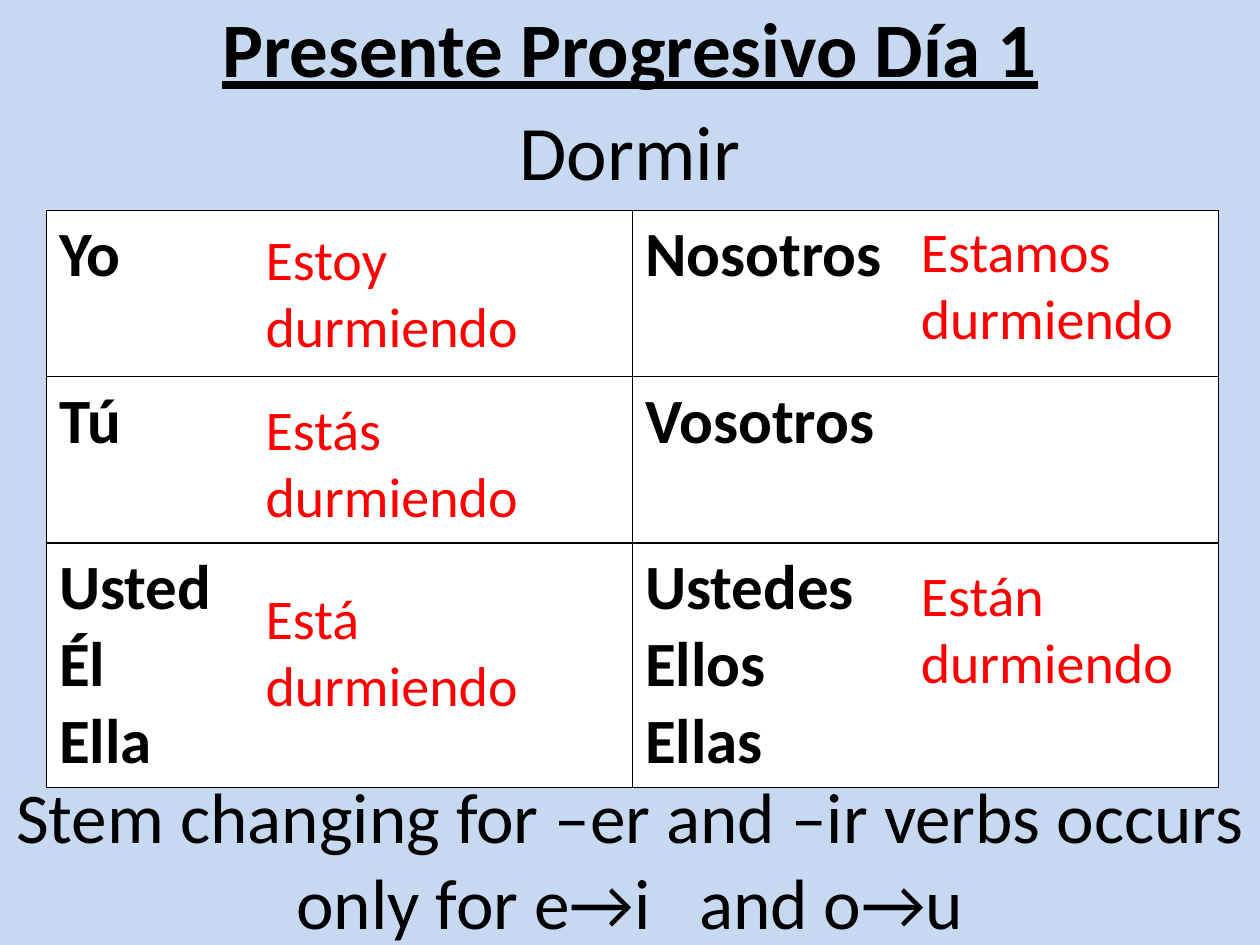
from dataclasses import dataclass

from lxml import etree
from pptx import Presentation
from pptx.dml.color import RGBColor
from pptx.enum.text import MSO_ANCHOR, PP_ALIGN
from pptx.oxml.ns import qn
from pptx.util import Inches, Pt

CENTER, LEFT = PP_ALIGN.CENTER, PP_ALIGN.LEFT
MIDDLE, TOP = MSO_ANCHOR.MIDDLE, MSO_ANCHOR.TOP
TITLE_ONLY = 5


@dataclass(frozen=True)
class Theme:
    font: str = "Calibri"
    background: str = "C6D9F1"
    ink: str = "000000"
    answer: str = "FF0000"
    cell: str = "FFFFFF"
    heading_size: float = 44
    rule_size: float = 40.7
    pronoun_size: float = 36
    answer_size: float = 32


THEME = Theme()

PRONOUNS = [
    (["Yo"], ["Nosotros"]),
    (["Tú"], ["Vosotros"]),
    (["Usted", "Él", "Ella"], ["Ustedes", "Ellos", "Ellas"]),
]
ROW_HEIGHTS = [1.32, 1.32, 1.94]
COLUMN_WIDTH = 4.65

# Conjugated forms by column: left, width, then (top, text)
ANSWERS = [
    (2.01, 2.74, [(1.73, "Estoy durmiendo"), (3.08, "Estás durmiendo"),
                  (4.58, "Está durmiendo")]),
    (7.21, 2.48, [(1.67, "Estamos durmiendo"), (4.4, "Están durmiendo")]),
]


def style(p, size, color=THEME.ink, bold=False, align=LEFT):
    p.alignment = align
    p.font.name = THEME.font
    p.font.size = Pt(size)
    p.font.bold = bold
    p.font.color.rgb = RGBColor.from_string(color)


def set_title(slide, text):
    sp = slide.shapes.title
    sp.left, sp.top = Inches(0), Inches(-0.31)
    sp.width, sp.height = Inches(10), Inches(1.36)
    tf = sp.text_frame
    tf.text = text
    tf.vertical_anchor = MIDDLE
    p = tf.paragraphs[0]
    style(p, THEME.heading_size, bold=True, align=CENTER)
    p.font.underline = True


def add_text(slide, text, left, top, width, height, size,
             color=THEME.ink, align=LEFT, anchor=TOP):
    sp = slide.shapes.add_textbox(Inches(left), Inches(top),
                                  Inches(width), Inches(height))
    tf = sp.text_frame
    tf.word_wrap = True
    tf.vertical_anchor = anchor
    tf.text = text
    style(tf.paragraphs[0], size, color, align=align)


def add_borders(cell):
    tc_pr = cell._tc.get_or_add_tcPr()
    for i, side in enumerate(("a:lnL", "a:lnR", "a:lnT", "a:lnB")):
        ln = etree.Element(qn(side), w=str(Pt(1)))
        fill = etree.SubElement(ln, qn("a:solidFill"))
        etree.SubElement(fill, qn("a:srgbClr"), val=THEME.ink)
        tc_pr.insert(i, ln)


def fill_cell(cell, lines):
    cell.fill.solid()
    cell.fill.fore_color.rgb = RGBColor.from_string(THEME.cell)
    add_borders(cell)
    cell.text = "\n".join(lines)
    for p in cell.text_frame.paragraphs:
        style(p, THEME.pronoun_size, bold=True)


def add_pronoun_table(slide):
    frame = slide.shapes.add_table(
        len(PRONOUNS), 2, Inches(0.37), Inches(1.67),
        Inches(2 * COLUMN_WIDTH), Inches(sum(ROW_HEIGHTS)))
    table = frame.table
    for column in table.columns:
        column.width = Inches(COLUMN_WIDTH)
    for r, (height, pronouns) in enumerate(zip(ROW_HEIGHTS, PRONOUNS)):
        table.rows[r].height = Inches(height)
        for c, lines in enumerate(pronouns):
            fill_cell(table.cell(r, c), lines)


def add_answers(slide):
    for left, width, forms in ANSWERS:
        for top, text in forms:
            add_text(slide, text, left, top, width, 1.18,
                     THEME.answer_size, THEME.answer)


def main():
    prs = Presentation()
    prs.slide_width, prs.slide_height = Inches(10), Inches(7.5)
    slide = prs.slides.add_slide(prs.slide_layouts[TITLE_ONLY])
    slide.background.fill.solid()
    slide.background.fill.fore_color.rgb = RGBColor.from_string(THEME.background)

    # Title and conjugation chart
    set_title(slide, "Presente Progresivo Día 1")
    add_pronoun_table(slide)

    # Verb and its conjugated forms
    add_text(slide, "Dormir", 0, 0.51, 10, 1.36, THEME.heading_size,
             align=CENTER, anchor=MIDDLE)
    add_answers(slide)

    # Stem-change rule
    add_text(slide,
             "Stem changing for –er and –ir verbs occurs only for e→i   and o→u",
             0, 6.13, 10, 1.36, THEME.rule_size, align=CENTER, anchor=MIDDLE)

    prs.save("out.pptx")


if __name__ == "__main__":
    main()
